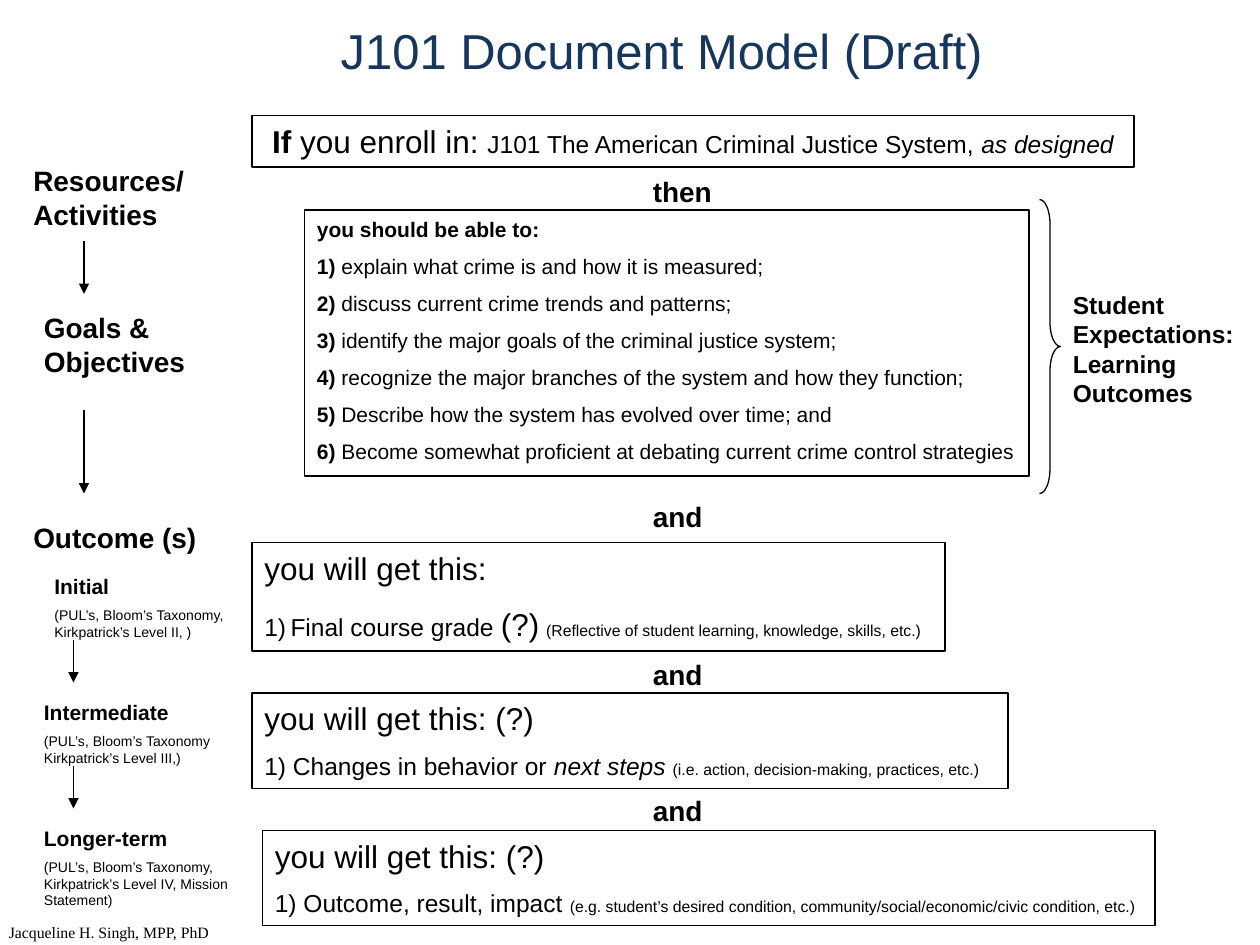
from pptx import Presentation
from pptx.dml.color import RGBColor
from pptx.enum.shapes import MSO_CONNECTOR as Connector, MSO_SHAPE as Shape
from pptx.enum.text import MSO_ANCHOR as Anchor, PP_ALIGN as Align
from pptx.oxml.ns import qn
from pptx.util import Pt
from lxml.etree import SubElement

THEME = {
    "font": "Arial", "credit_font": "Times New Roman",
    "ink": RGBColor(0, 0, 0), "title_ink": RGBColor(0x17, 0x36, 0x5D),
    "title": 28, "lead": 18, "heading": 16, "body": 14, "list": 12, "small": 9, "note": 8,
    "line": 0.75, "space_ratio": 0.57,
}

TITLE = ("J101 Document Model (Draft)", (186, 6, 384, 44.5))
CREDIT = ("Jacqueline H. Singh, MPP, PhD", (-2, 523.5, 133, 18))
EXPECTATIONS = ("Student Expectations: Learning Outcomes", (606, 162, 114, 74))

ABILITIES = [
    "explain what crime is and how it is measured;",
    "discuss current crime trends and patterns;",
    "identify the major goals of the criminal justice system;",
    "recognize the major branches of the system and how they function;",
    "Describe how the system has evolved over time; and",
    "Become somewhat proficient at debating current crime control strategies",
]
ENROLL = [[("If ", "lead", "b"), ("you enroll in: ", "lead", ""),
           ("J101 The American Criminal Justice System, ", "body", ""),
           ("as designed", "body", "i")]]
EXPECTED = [[("you should be able to:", "list", "b")]] + [
    [(f"{number}) ", "list", "b"), (ability, "list", "")]
    for number, ability in enumerate(ABILITIES, 1)
]
GRADE = [
    [("you will get this:", "lead", "")],
    [("1)", "body", ""), (" ", "small", ""), ("Final course grade ", "body", ""),
     ("(?)", "lead", ""), (" ", "body", ""),
     ("(Reflective of student learning, knowledge, skills, etc.)", "small", "")],
]
BEHAVIOR = [
    [("you will get this: (?)", "lead", "")],
    [("1) Changes in behavior or ", "body", ""), ("next steps ", "body", "i"),
     ("(i.e. action, decision-making, practices, etc.)", "small", "")],
]
IMPACT = [
    [("you will get this: (?)", "lead", "")],
    [("1) Outcome, result, impact ", "body", ""),
     ("(e.g. student’s desired condition, community/social/economic/civic condition, etc.)",
      "small", "")],
]
BOXES = [
    (ENROLL, (144, 66, 504, 29.5), Align.CENTER),
    (EXPECTED, (174, 120, 414, 152), Align.LEFT),
    (GRADE, (144, 310, 396, 62), Align.LEFT),
    (BEHAVIOR, (144, 396, 432, 54.5), Align.LEFT),
    (IMPACT, (150, 474.5, 510, 54.5), Align.LEFT),
]
JOINERS = [("then", 96), ("and", 282), ("and", 372), ("and", 450)]
JOINER_LEFT, JOINER_WIDTH = 366, 54
STAGES = [
    ("Resources/Activities", (12, 90, 102, 46)),
    ("Goals & Objectives", (18, 174, 102, 46)),
    ("Outcome (s)", (12, 294, 114, 26.5)),
]
LEVELS = [
    ("Initial", "(PUL’s, Bloom’s Taxonomy, Kirkpatrick’s Level II, )", (24, 324, 138, 46)),
    ("Intermediate", "(PUL’s, Bloom’s Taxonomy Kirkpatrick’s Level III,)", (18, 396, 120, 46)),
    ("Longer-term", "(PUL’s, Bloom’s Taxonomy, Kirkpatrick’s Level IV, Mission Statement)",
     (18, 468, 132, 55.5)),
]
ARROWS = [(48, 138, 168), (48, 234, 282), (42, 366, 390), (42, 438, 462)]
BRACE = (594, 114, 12, 168)


def points(values):
    return [Pt(value) for value in values]


def write(shape, paragraphs, align=Align.LEFT, font="font", ink="ink", wrap=True):
    frame = shape.text_frame
    frame.word_wrap = wrap
    frame.vertical_anchor = Anchor.TOP
    for index, pieces in enumerate(paragraphs):
        paragraph = frame.add_paragraph() if index else frame.paragraphs[0]
        paragraph.alignment = align
        if index:
            largest = max(THEME[size] for _, size, _ in pieces)
            paragraph.space_before = Pt(round(largest * THEME["space_ratio"], 1))
        for text, size, style in pieces:
            run = paragraph.add_run()
            run.text = text
            run.font.name = THEME[font]
            run.font.size = Pt(THEME[size])
            run.font.bold = "b" in style
            run.font.italic = "i" in style
            run.font.color.rgb = THEME[ink]


def add_text(slide, area, paragraphs, **options):
    shape = slide.shapes.add_textbox(*points(area))
    write(shape, paragraphs, **options)
    return shape


def add_outline(slide, kind, area):
    shape = slide.shapes.add_shape(kind, *points(area))
    shape.shadow.inherit = False
    shape.fill.background()
    shape.line.color.rgb = THEME["ink"]
    shape.line.width = Pt(THEME["line"])
    return shape


def add_arrow(slide, x, top, bottom):
    arrow = slide.shapes.add_connector(Connector.STRAIGHT, *points((x, top, x, bottom)))
    arrow.line.color.rgb = THEME["ink"]
    arrow.line.width = Pt(THEME["line"])
    SubElement(arrow.line._get_or_add_ln(), qn("a:tailEnd"), type="triangle")
    SubElement(arrow._element.spPr, qn("a:effectLst"))


def main():
    presentation = Presentation()
    presentation.slide_width, presentation.slide_height = Pt(720), Pt(540)
    slide = presentation.slides.add_slide(presentation.slide_layouts[6])

    text, area = TITLE
    title = add_text(slide, area, [[(text, "title", "")]], align=Align.CENTER, ink="title_ink")
    title.text_frame.vertical_anchor = Anchor.MIDDLE

    for paragraphs, area, align in BOXES:
        write(add_outline(slide, Shape.RECTANGLE, area), paragraphs, align)
    for text, top in JOINERS:
        add_text(slide, (JOINER_LEFT, top, JOINER_WIDTH, 26.5), [[(text, "heading", "b")]])
    for text, area in STAGES:
        add_text(slide, area, [[(text, "heading", "b")]])
    for name, note, area in LEVELS:
        add_text(slide, area, [[(name, "list", "b")], [(note, "note", "")]])
    for arrow in ARROWS:
        add_arrow(slide, *arrow)

    brace = add_outline(slide, Shape.RIGHT_BRACE, BRACE)
    brace.adjustments[0], brace.adjustments[1] = 1.17, 0.5
    text, area = EXPECTATIONS
    add_text(slide, area, [[(text, "body", "b")]])
    text, area = CREDIT
    add_text(slide, area, [[(text, "small", "")]], font="credit_font", wrap=False)
    presentation.save("out.pptx")


if __name__ == "__main__":
    main()
